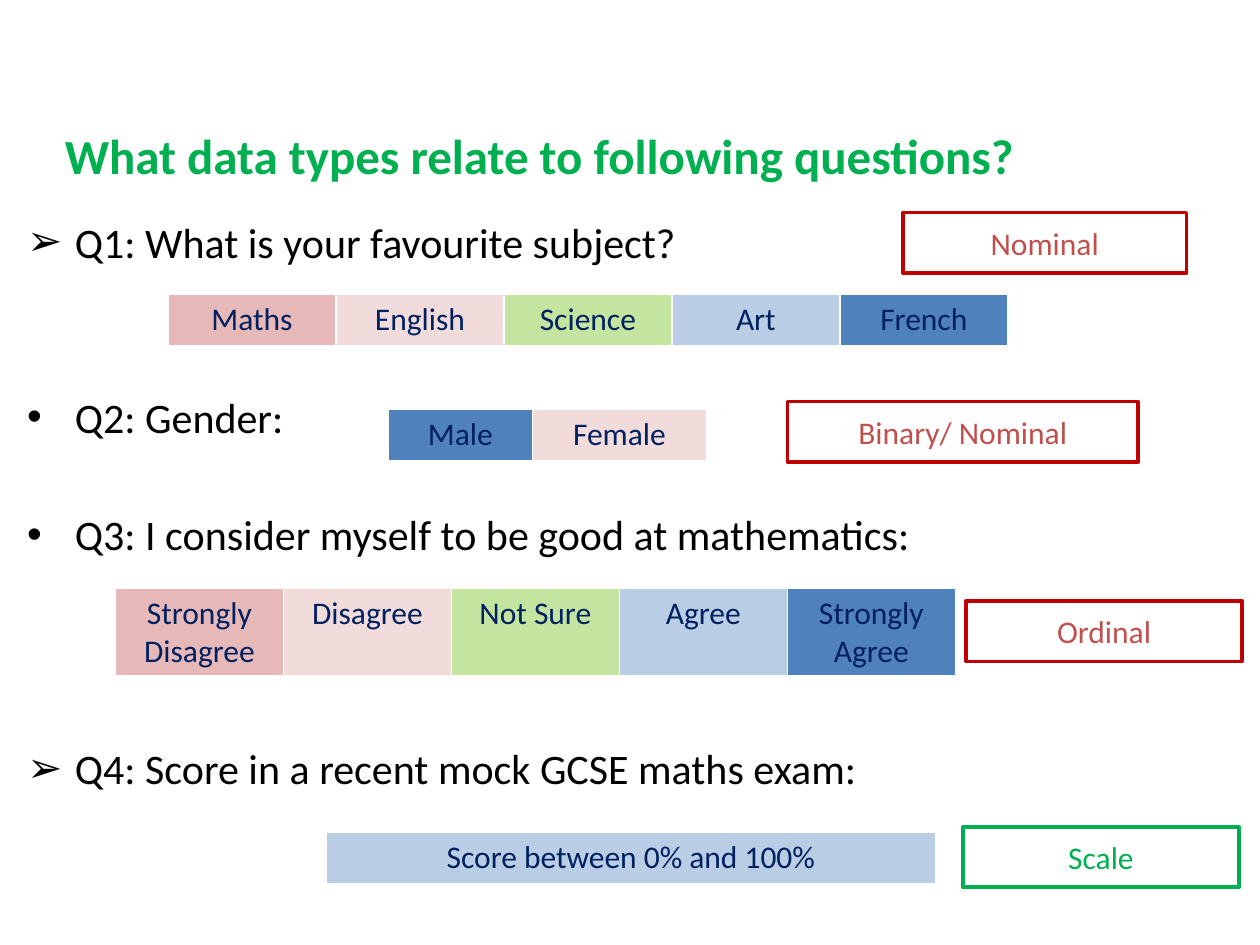
from lxml.etree import SubElement
from pptx import Presentation
from pptx.dml.color import RGBColor
from pptx.enum.shapes import MSO_SHAPE
from pptx.enum.text import MSO_ANCHOR, PP_ALIGN
from pptx.oxml.ns import qn
from pptx.util import Inches, Pt

WIDTH, HEIGHT = Inches(10), Inches(7.5)
COLUMNS, ROWS = 120, 90
ROSE, BLUSH, LIME, SKY, BLUE = "E6B9B8", "F2DCDB", "C4E59F", "B9CDE5", "4F81BD"
SCALE_FILLS = (ROSE, BLUSH, LIME, SKY, BLUE)
NAVY, BLACK, WHITE, GREEN = "002060", "000000", "FFFFFF", "00B050"
DARK_RED, SOFT_RED = "C00000", "C0504D"


def color(value):
    return RGBColor.from_string(value)


class QuizPage:
    """Draws on one slide; lengths are columns and rows of a 120 x 90 grid."""

    font_name = "Calibri"

    def __init__(self, deck):
        self.page = deck.slides.add_slide(deck.slide_layouts[6])

    def area(self, left, top, width, height):
        return (int(WIDTH * left / COLUMNS), int(HEIGHT * top / ROWS),
                int(WIDTH * width / COLUMNS), int(HEIGHT * height / ROWS))

    def set_text(self, para, text, size, ink, bold=False, align=PP_ALIGN.LEFT):
        para.text = text
        para.alignment = align
        font = para.font
        font.name, font.size, font.bold = self.font_name, Pt(size), bold
        font.color.rgb = color(ink)

    def text_frame(self, *place):
        frame = self.page.shapes.add_textbox(*self.area(*place)).text_frame
        frame.word_wrap = True
        return frame

    def title(self, text, *place):
        frame = self.text_frame(*place)
        self.set_text(frame.paragraphs[0], text, 28, GREEN, bold=True)

    def questions(self, items, *place):
        """Each item is a bullet, a text and the points of space before it."""
        frame = self.text_frame(*place)
        for index, (bullet, text, gap) in enumerate(items):
            para = frame.add_paragraph() if index else frame.paragraphs[0]
            properties = para._p.get_or_add_pPr()
            properties.set("marL", str(Inches(0.38)))
            properties.set("indent", str(Inches(-0.38)))
            SubElement(properties, qn("a:buFont"), typeface="Arial")
            SubElement(properties, qn("a:buChar"), char=bullet)
            self.set_text(para, text, 24, BLACK)
            if index:
                para.space_before = Pt(gap)

    def options(self, left, top, height, widths, labels, fills):
        """One-row table; the default table style supplies its white borders."""
        place = self.area(left, top, sum(widths), height)
        table = self.page.shapes.add_table(1, len(labels), *place).table
        for index, (width, label, fill) in enumerate(zip(widths, labels, fills)):
            table.columns[index].width = int(WIDTH * width / COLUMNS)
            cell = table.cell(0, index)
            cell.fill.solid()
            cell.fill.fore_color.rgb = color(fill)
            self.set_text(cell.text_frame.paragraphs[0], label, 18, NAVY,
                          align=PP_ALIGN.CENTER)

    def answer(self, text, left, top, width, border=DARK_RED, ink=SOFT_RED):
        box = self.page.shapes.add_shape(
            MSO_SHAPE.RECTANGLE, *self.area(left, top, width, 5.75))
        box.shadow.inherit = False
        box.fill.solid()
        box.fill.fore_color.rgb = color(WHITE)
        box.line.color.rgb = color(border)
        box.line.width = Pt(2)
        box.text_frame.word_wrap = True
        box.text_frame.vertical_anchor = MSO_ANCHOR.MIDDLE
        self.set_text(box.text_frame.paragraphs[0], text, 18, ink,
                      align=PP_ALIGN.CENTER)


def main():
    deck = Presentation()
    deck.slide_width, deck.slide_height = WIDTH, HEIGHT
    quiz = QuizPage(deck)

    quiz.title("What data types relate to following questions?", 5, 11.4, 110, 6.8)
    quiz.questions([
        ("➢", "Q1: What is your favourite subject?", 0),
        ("•", "Q2: Gender:", 71.3),
        ("•", "Q3: I consider myself to be good at mathematics:", 38.3),
        ("➢", "Q4: Score in a recent mock GCSE maths exam:", 105),
    ], 1.4, 20, 115.6, 62.4)

    quiz.options(16, 28, 4.9, [16] * 5,
                 ["Maths", "English", "Science", "Art", "French"], SCALE_FILLS)
    quiz.options(37, 39, 4.9, [13.7, 16.6], ["Male", "Female"], [BLUE, BLUSH])
    quiz.options(11, 56, 8.4, [16] * 5,
                 ["Strongly Disagree", "Disagree", "Not Sure", "Agree",
                  "Strongly Agree"], SCALE_FILLS)
    quiz.options(31.1, 79.3, 4.9, [58], ["Score between 0% and 100%"], [SKY])

    quiz.answer("Nominal", 86, 20.25, 27)
    quiz.answer("Binary/ Nominal", 75, 38.25, 33.4)
    quiz.answer("Ordinal", 92, 57.25, 26.3)
    quiz.answer("Scale", 91.7, 78.75, 26.3, GREEN, GREEN)

    deck.save("out.pptx")


if __name__ == "__main__":
    main()
